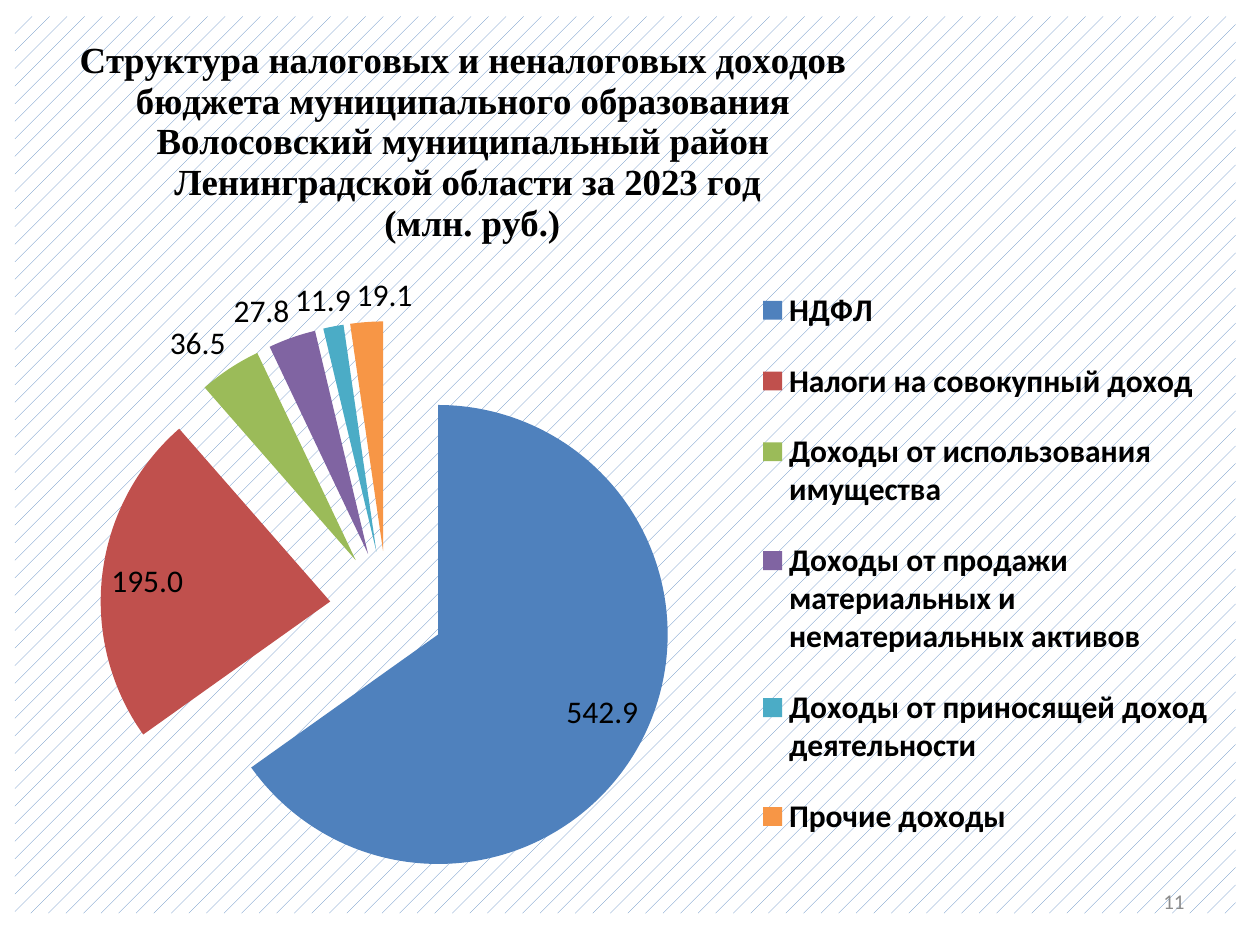
import pptx
import pptx.chart.data
import pptx.dml.color
import pptx.enum.chart
import pptx.enum.text
import pptx.oxml
import pptx.oxml.ns
import pptx.util

Cm = pptx.util.Cm

# Content
TITLE = [
    "Структура налоговых и неналоговых доходов ",
    "бюджета муниципального образования ",
    "Волосовский муниципальный район ",
    "Ленинградской области за 2023 год",
    " (млн. руб.)",
]
INCOME = [
    ("НДФЛ", 542.9, "blue"),
    ("Налоги на совокупный доход", 195.0, "red"),
    ("Доходы от использования имущества ", 36.5, "green"),
    ("Доходы от продажи материальных и нематериальных активов", 27.8, "plum"),
    ("Доходы от приносящей доход деятельности", 11.9, "teal"),
    ("Прочие доходы", 19.1, "orange"),
]
PAGE = "11"
COLORS = {
    "blue": "4F81BD", "red": "C0504D", "green": "9BBB59", "plum": "8064A2",
    "teal": "4BACC6", "orange": "F79646", "black": "000000", "gray": "8C8C8C",
    "white": "FFFFFF",
}
# Shares of the chart area: left, top, width, height
PLOT = (0.07, 0.34, 0.47, 0.64)
LEGEND = (0.6, 0.27, 0.39, 0.68)
HEAD = (0.05, 0.02)


def color(name):
    return pptx.dml.color.RGBColor.from_string(COLORS[name])


def style(font, size=18, bold=False, tint="black", face="Calibri"):
    font.size, font.bold, font.name = pptx.util.Pt(size), bold, face
    font.color.rgb = color(tint)


def write(para, text, align=None, **form):
    run = para.add_run()
    run.text = text
    para.alignment = align
    style(run.font, **form)


def node(xml):
    spaces = pptx.oxml.ns.nsdecls("c", "a")
    return pptx.oxml.parse_xml(xml.replace(">", f" {spaces}>", 1))


def place(part, index, box, inner=False):
    """Give a chart part a fixed place."""
    for old in part.findall(pptx.oxml.ns.qn("c:layout")):
        part.remove(old)
    tags = '<c:layoutTarget val="inner"/>' if inner else ""
    tags += '<c:xMode val="edge"/><c:yMode val="edge"/>'
    tags += "".join(f'<c:{k} val="{v}"/>' for k, v in zip("xywh", box))
    part.insert(index, node(
        f"<c:layout><c:manualLayout>{tags}</c:manualLayout></c:layout>"))


deck = pptx.Presentation()
deck.slide_width, deck.slide_height = Cm(25.4), Cm(19.05)
slide = deck.slides.add_slide(deck.slide_layouts[6])

# Pie chart
data = pptx.chart.data.CategoryChartData(number_format="0.0")
data.categories = [name for name, _, _ in INCOME]
data.add_series("Series 1", [value for _, value, _ in INCOME])
chart = slide.shapes.add_chart(
    pptx.enum.chart.XL_CHART_TYPE.PIE,
    Cm(0.3), Cm(0.33), Cm(24.61), Cm(18.08), data).chart
style(chart.font)
plot = chart.plots[0]
plot.vary_by_categories = True
pie = plot.series[0]
for i, (_, _, tint) in enumerate(INCOME):
    fill = pie.points[i].format.fill
    fill.solid()
    fill.fore_color.rgb = color(tint)
pie._element.insert(3, node('<c:explosion val="25"></c:explosion>'))

# Value labels
plot.has_data_labels = True
labels = plot.data_labels
labels.show_value, labels.show_percentage = True, False
labels.number_format, labels.number_format_is_linked = "0.0", False
labels.position = pptx.enum.chart.XL_LABEL_POSITION.BEST_FIT
style(labels.font)

# Chart title
chart.has_title = True
head = chart.chart_title.text_frame
for i, line in enumerate(TITLE):
    para = head.add_paragraph() if i else head.paragraphs[0]
    write(para, line, align=pptx.enum.text.PP_ALIGN.CENTER,
          size=21, bold=True, face="Times New Roman")

# Legend
chart.has_legend = True
chart.legend.position = pptx.enum.chart.XL_LEGEND_POSITION.RIGHT
chart.legend.include_in_layout = False
style(chart.legend.font, bold=True)

# Places and patterned ground
root = chart._chartSpace
place(root.chart.plotArea, 0, PLOT, inner=True)
place(chart.legend._element, 1, LEGEND)
place(chart.chart_title._element, 1, HEAD)
root.chart.addnext(node(
    '<c:spPr><a:pattFill prst="pct5">'
    f'<a:fgClr><a:srgbClr val="{COLORS["blue"]}"/></a:fgClr>'
    f'<a:bgClr><a:srgbClr val="{COLORS["white"]}"/></a:bgClr>'
    "</a:pattFill><a:ln><a:noFill/></a:ln></c:spPr>"))

# Page number
frame = slide.shapes.add_textbox(
    Cm(18.21), Cm(17.65), Cm(5.92), Cm(1.02)).text_frame
frame.word_wrap = True
frame.vertical_anchor = pptx.enum.text.MSO_ANCHOR.MIDDLE
write(frame.paragraphs[0], PAGE, align=pptx.enum.text.PP_ALIGN.RIGHT,
      size=12, tint="gray")

deck.save("out.pptx")
